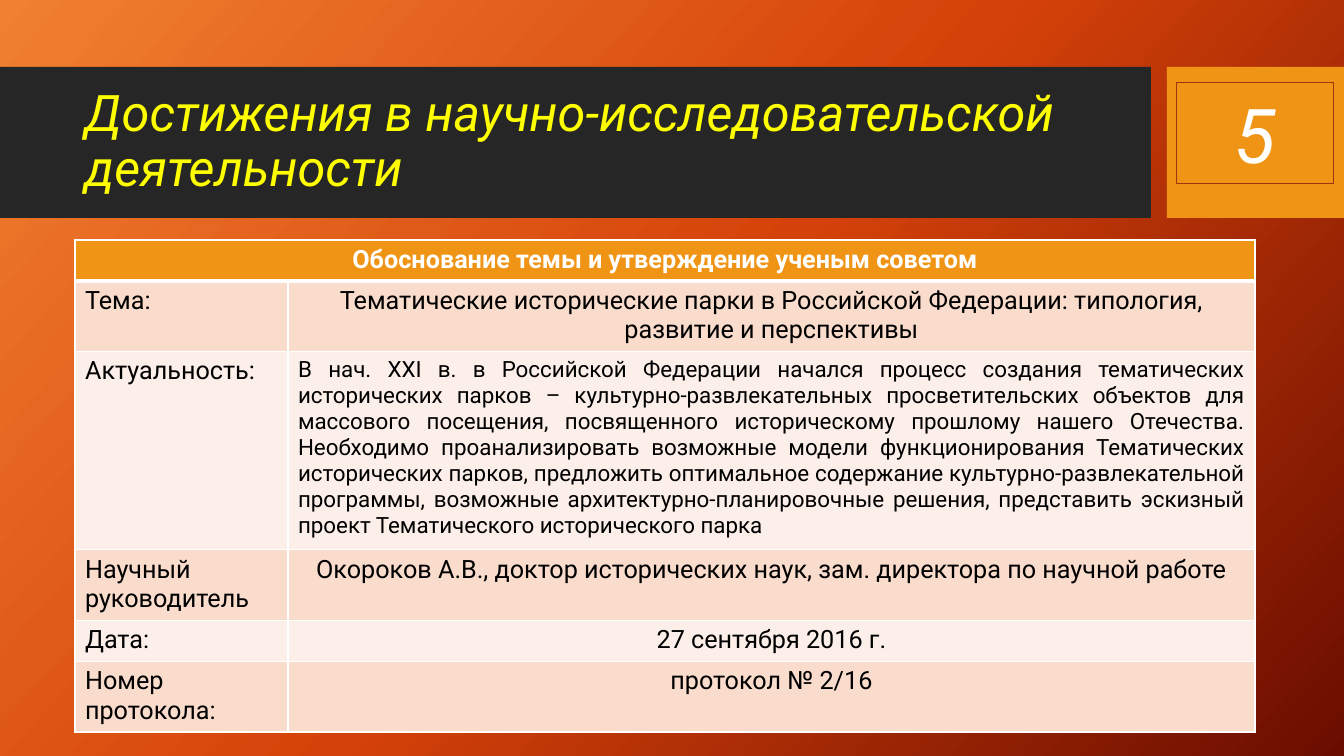
from lxml.etree import SubElement
from pptx import Presentation
from pptx.dml.color import RGBColor
from pptx.enum.shapes import MSO_SHAPE
from pptx.enum.text import MSO_ANCHOR, PP_ALIGN
from pptx.oxml.ns import qn
from pptx.util import Emu, Pt

FONT = "Roboto"
BLACK, WHITE, YELLOW = "000000", "FFFFFF", "FFFF00"
DARK, ORANGE, RUST = "262626", "F09415", "9D360E"
BANDS = ("F9DCCC", "FCEEE8")
LEFT, CENTER, JUSTIFY = PP_ALIGN.LEFT, PP_ALIGN.CENTER, PP_ALIGN.JUSTIFY

HEADER = "Обоснование темы и утверждение ученым советом"
COLUMNS = (213, 967)
HEADER_HEIGHT = 41
# Row height, label paragraphs, value, value size, value alignment
ROWS = [
    (69, ["Тема:"],
     "Тематические исторические парки в Российской Федерации: типология, "
     "развитие и перспективы", 18, CENTER),
    (193, ["Актуальность:"],
     "В нач. XXI в. в Российской Федерации начался процесс создания "
     "тематических исторических парков – культурно-развлекательных "
     "просветительских объектов для массового посещения, посвященного "
     "историческому прошлому нашего Отечества. Необходимо проанализировать "
     "возможные модели функционирования Тематических исторических парков, "
     "предложить оптимальное содержание культурно-развлекательной программы, "
     "возможные архитектурно-планировочные решения, представить эскизный "
     "проект Тематического исторического парка", 16, JUSTIFY),
    (69, ["Научный", "руководитель"],
     "Окороков А.В., доктор исторических наук, зам. директора по научной "
     "работе", 18, CENTER),
    (41, ["Дата:"], "27 сентября 2016 г.", 18, CENTER),
    (69, ["Номер протокола:"], "протокол № 2/16", 18, CENTER),
]


def px(n):
    return Emu(round(n * 914400 / 100.8))


def rgb(color):
    return RGBColor.from_string(color)


def set_background(s, stops, angle):
    s.background.fill.gradient()
    gradient = next(s._element.iter(qn("a:gradFill")))
    stop_list = gradient.find(qn("a:gsLst"))
    for old in list(stop_list):
        stop_list.remove(old)
    for percent, color in stops:
        stop = SubElement(stop_list, qn("a:gs"), pos=str(percent * 1000))
        SubElement(stop, qn("a:srgbClr"), val=color)
    gradient.find(qn("a:lin")).set("ang", str(angle * 60000))


def write(tf, lines, size, color, align=LEFT, bold=False, italic=False,
          spacing=None):
    tf.word_wrap = True
    for i, line in enumerate(lines):
        p = tf.add_paragraph() if i else tf.paragraphs[0]
        p.alignment = align
        if spacing:
            p.line_spacing = spacing
        r = p.add_run()
        r.text = line
        r.font.name, r.font.size = FONT, Pt(size)
        r.font.bold, r.font.italic = bold, italic
        r.font.color.rgb = rgb(color)


def add_block(s, x, y, w, h, color):
    sp = s.shapes.add_shape(MSO_SHAPE.RECTANGLE, px(x), px(y), px(w), px(h))
    sp.shadow.inherit = False
    sp.fill.solid()
    sp.fill.fore_color.rgb = rgb(color)
    sp.line.fill.background()


def add_text(s, x, y, w, h, text, size, color, anchor=MSO_ANCHOR.TOP, **style):
    sp = s.shapes.add_textbox(px(x), px(y), px(w), px(h))
    sp.text_frame.vertical_anchor = anchor
    write(sp.text_frame, [text], size, color, italic=True, **style)
    return sp


def style_cell(cell, fill, bottom=1):
    tc_pr = cell._tc.get_or_add_tcPr()
    for side, width in (("L", 1), ("R", 1), ("T", 1), ("B", bottom)):
        ln = SubElement(tc_pr, qn("a:ln" + side), w=str(Pt(width)))
        SubElement(SubElement(ln, qn("a:solidFill")), qn("a:srgbClr"), val=WHITE)
    cell.fill.solid()
    cell.fill.fore_color.rgb = rgb(fill)


def add_topic_table(s, x, y):
    heights = [HEADER_HEIGHT] + [row[0] for row in ROWS]
    table = s.shapes.add_table(len(heights), len(COLUMNS), px(x), px(y),
                               px(sum(COLUMNS)), px(sum(heights))).table
    for column, width in zip(table.columns, COLUMNS):
        column.width = px(width)
    for row, height in zip(table.rows, heights):
        row.height = px(height)

    # Header across both columns
    header = table.cell(0, 0)
    header.merge(table.cell(0, 1))
    for cell in table.rows[0].cells:
        style_cell(cell, ORANGE, bottom=3)
    write(header.text_frame, [HEADER], 18, WHITE, CENTER, bold=True)

    # Banded body rows
    for i, (_, label, value, size, align) in enumerate(ROWS):
        label_cell, value_cell = table.rows[i + 1].cells
        for cell in (label_cell, value_cell):
            style_cell(cell, BANDS[i % 2])
        write(label_cell.text_frame, label, 18, BLACK)
        write(value_cell.text_frame, [value], size, BLACK, align)


def main():
    prs = Presentation()
    prs.slide_width, prs.slide_height = px(1344), px(756)
    s = prs.slides.add_slide(prs.slide_layouts[6])
    set_background(s, [(0, "F18031"), (50, "D54209"), (100, "6A0D00")], 42)

    # Title band and number block
    add_block(s, 0, 67, 1151, 151, DARK)
    add_block(s, 1167, 67, 177, 151, ORANGE)
    add_text(s, 75, 83, 1059, 119,
             "Достижения в научно-исследовательской деятельности", 36, YELLOW,
             MSO_ANCHOR.MIDDLE, spacing=0.9)

    # Research topic
    add_topic_table(s, 75, 240)

    # Slide number
    number = add_text(s, 1177, 83, 157, 101, "5", 54, WHITE, align=CENTER)
    number.line.color.rgb = rgb(RUST)
    number.line.width = Pt(0.75)

    prs.save("out.pptx")


if __name__ == "__main__":
    main()
